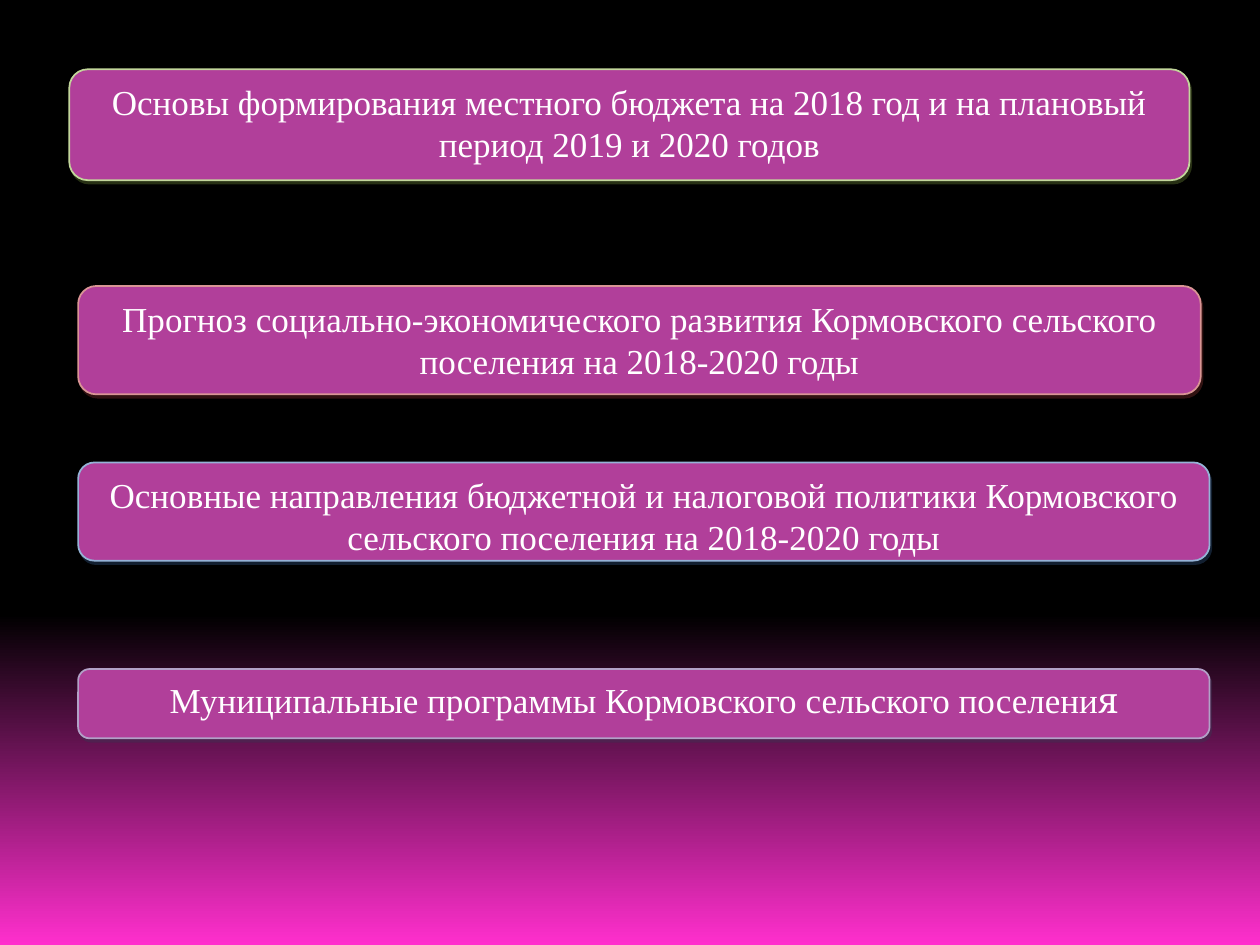
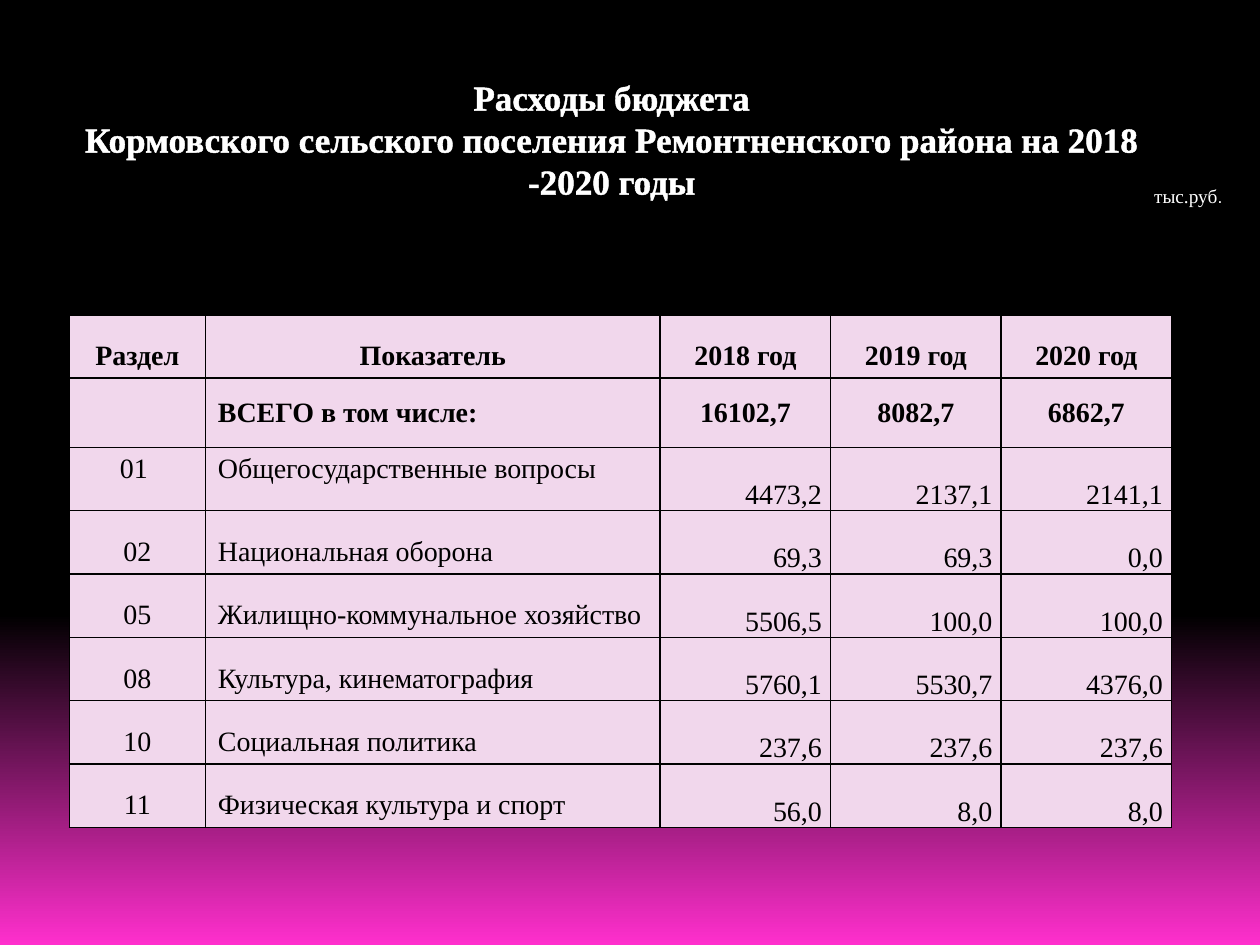
from copy import deepcopy

from lxml import etree
from pptx import Presentation, util as u
from pptx.dml.color import RGBColor
from pptx.enum import shapes, text
from pptx.oxml import ns

FONT = "Times New Roman"
WHITE, BLACK = "FFFFFF", "000000"
GLOW, PLUM, PALE = "FF2FCD", "B13F9A", "F1D7EC"
LEFT, CENTER, RIGHT = text.PP_ALIGN.LEFT, text.PP_ALIGN.CENTER, text.PP_ALIGN.RIGHT
TOP, MIDDLE, BOTTOM = text.MSO_ANCHOR.TOP, text.MSO_ANCHOR.MIDDLE, text.MSO_ANCHOR.BOTTOM
TITLE_ONLY, BLANK = 5, 6
GRID_COLUMNS, GRID_ROWS = 100, 75

BASES = [
    ((5.5, 5.5, 88.9, 8.8), "C2D69B", "4E6128",
     ["Основы формирования местного бюджета на 2018 год и на плановый период 2019 и 2020 годов"]),
    ((6.2, 22.7, 89.1, 8.6), "D99594", "622423",
     ["Прогноз социально-экономического развития Кормовского сельского поселения на 2018-2020 годы"]),
    ((6.2, 36.7, 89.8, 7.8), "95B3D7", "243F60",
     ["Основные направления бюджетной и налоговой политики Кормовского сельского поселения на 2018-2020 годы"]),
    ((6.2, 53.1, 89.8, 5.5), "B2A1C7", "3F3151",
     ["Муниципальные программы Кормовского сельского поселени", ("я", "Cambria", 20)]),
]

EXPENSES = [
    ["Раздел", "Показатель", "2018 год", "2019 год", "2020 год"],
    ["", "ВСЕГО в том числе:", "16102,7", "8082,7", "6862,7"],
    ["01 ", "Общегосударственные вопросы", "4473,2", "2137,1", "2141,1"],
    ["02", "Национальная оборона", "69,3", "69,3", "0,0"],
    ["05", "Жилищно-коммунальное хозяйство", "5506,5", "100,0", "100,0"],
    ["08", "Культура, кинематография", "5760,1", "5530,7", "4376,0"],
    ["10", "Социальная политика", "237,6", "237,6", "237,6"],
    ["11", "Физическая культура и спорт", "56,0", "8,0", "8,0"],
]


def rgb(color):
    return RGBColor.from_string(color)


def add_xml(parent, tag, **attributes):
    return etree.SubElement(parent, ns.qn(tag), attributes)


def add_line(parent, tag, color):
    line = add_xml(parent, tag, w=str(u.Pt(1)))
    add_xml(add_xml(line, "a:solidFill"), "a:srgbClr", val=color)


class BudgetDeck:
    def __init__(self):
        self.deck = Presentation()
        self.deck.slide_width, self.deck.slide_height = u.Inches(10), u.Inches(7.5)
        self.page = None
        self.paint_background()

    def paint_background(self):
        fill = self.deck.slide_master.background.fill
        fill.gradient()
        fill.gradient_angle = 270
        for stop, color in zip(fill.gradient_stops, (BLACK, GLOW)):
            stop.color.rgb = rgb(color)
        first = self.deck.slide_master.element.find(".//" + ns.qn("a:gs"))
        middle = deepcopy(first)
        middle.set("pos", "65000")
        first.addnext(middle)

    def new_page(self, layout):
        self.page = self.deck.slides.add_slide(self.deck.slide_layouts[layout])

    def columns(self, count):
        return int(self.deck.slide_width * count / GRID_COLUMNS)

    def rows(self, count):
        return int(self.deck.slide_height * count / GRID_ROWS)

    def place(self, left, top, width, height):
        return self.columns(left), self.rows(top), self.columns(width), self.rows(height)

    def set_text(self, frame, spans, size, color=WHITE, align=CENTER, bold=False):
        frame.word_wrap = True
        para = frame.paragraphs[0]
        para.alignment = align
        para.font.name, para.font.size, para.font.bold = FONT, u.Pt(size), bold
        para.font.color.rgb = rgb(color)
        for span in spans:
            if isinstance(span, str):
                para.add_run().text = span
            else:
                run = para.add_run()
                run.text, run.font.name, points = span
                run.font.size = u.Pt(points)
        return para

    def title(self, lines, place):
        box = self.page.shapes.title
        box.left, box.top, box.width, box.height = self.place(*place)
        frame = box.text_frame
        frame.auto_size = text.MSO_AUTO_SIZE.NONE
        frame.vertical_anchor = TOP
        frame.text = "\v".join(lines)
        para = self.set_text(frame, [], 20, bold=True)
        for run in para.runs:
            add_line(run._r.get_or_add_rPr(), "a:ln", WHITE)

    def caption(self, spans, place, size):
        box = self.page.shapes.add_textbox(*self.place(*place))
        self.set_text(box.text_frame, spans, size, align=RIGHT)

    def plate(self, place, edge, shade, spans):
        box = self.page.shapes.add_shape(shapes.MSO_SHAPE.ROUNDED_RECTANGLE, *self.place(*place))
        box.fill.solid()
        box.fill.fore_color.rgb = rgb(PLUM)
        box.line.color.rgb = rgb(edge)
        box.line.width = u.Pt(1)
        box.shadow.inherit = False
        effects = box.element.spPr.find(ns.qn("a:effectLst"))
        shadow = add_xml(effects, "a:outerShdw", dist=str(u.Pt(2.2)), dir="3780000",
                         algn="ctr", rotWithShape="0")
        add_xml(add_xml(shadow, "a:srgbClr", val=shade), "a:alpha", val="50000")
        box.text_frame.vertical_anchor = TOP
        self.set_text(box.text_frame, spans, 20).space_after = u.Pt(10)

    def cell(self, cell, value, align, anchor, bold, insets):
        for side in ("L", "R", "T", "B"):
            add_line(cell._tc.get_or_add_tcPr(), "a:ln" + side, BLACK)
        cell.fill.solid()
        cell.fill.fore_color.rgb = rgb(PALE)
        cell.vertical_anchor = anchor
        across, down = insets
        cell.margin_left = cell.margin_right = u.Inches(across)
        cell.margin_top = cell.margin_bottom = u.Inches(down)
        self.set_text(cell.text_frame, [value] if value else [], 16, BLACK, align, bold)

    def expense_table(self, records, left, top, widths, heights):
        table = self.page.shapes.add_table(
            len(records), len(widths), *self.place(left, top, sum(widths), sum(heights))).table
        table.first_row = table.horz_banding = False
        for column, width in zip(table.columns, widths):
            column.width = self.columns(width)
        for row, height in zip(table.rows, heights):
            row.height = self.rows(height)
        for r, record in enumerate(records):
            for c, value in enumerate(record):
                number = r > 0 and c > 1
                anchor = MIDDLE if r == 1 else TOP if r == 2 and not number else BOTTOM
                align = LEFT if r and c == 1 else RIGHT if r > 1 and number else CENTER
                insets = (0.07, 0) if number else (0.1, 0.05)
                self.cell(table.cell(r, c), value, align, anchor, r < 2, insets)


def main():
    budget = BudgetDeck()

    budget.new_page(BLANK)
    for place, edge, shade, spans in BASES:
        budget.plate(place, edge, shade, spans)

    budget.new_page(TITLE_ONLY)
    budget.title(["Расходы бюджета",
                  "Кормовского сельского поселения Ремонтненского района на 2018 -2020 годы"],
                 (2.3, 5.5, 92.5, 12.5))
    budget.expense_table(EXPENSES, 5.5, 25, [10.8, 36.1] + [13.53] * 3, [5, 5.5] + [5.03] * 6)
    budget.caption(["тыс.руб", (".", "Arial", 10)], (80.7, 14.1, 17.3, 2.9), 11)

    budget.deck.save("out.pptx")


if __name__ == "__main__":
    main()
